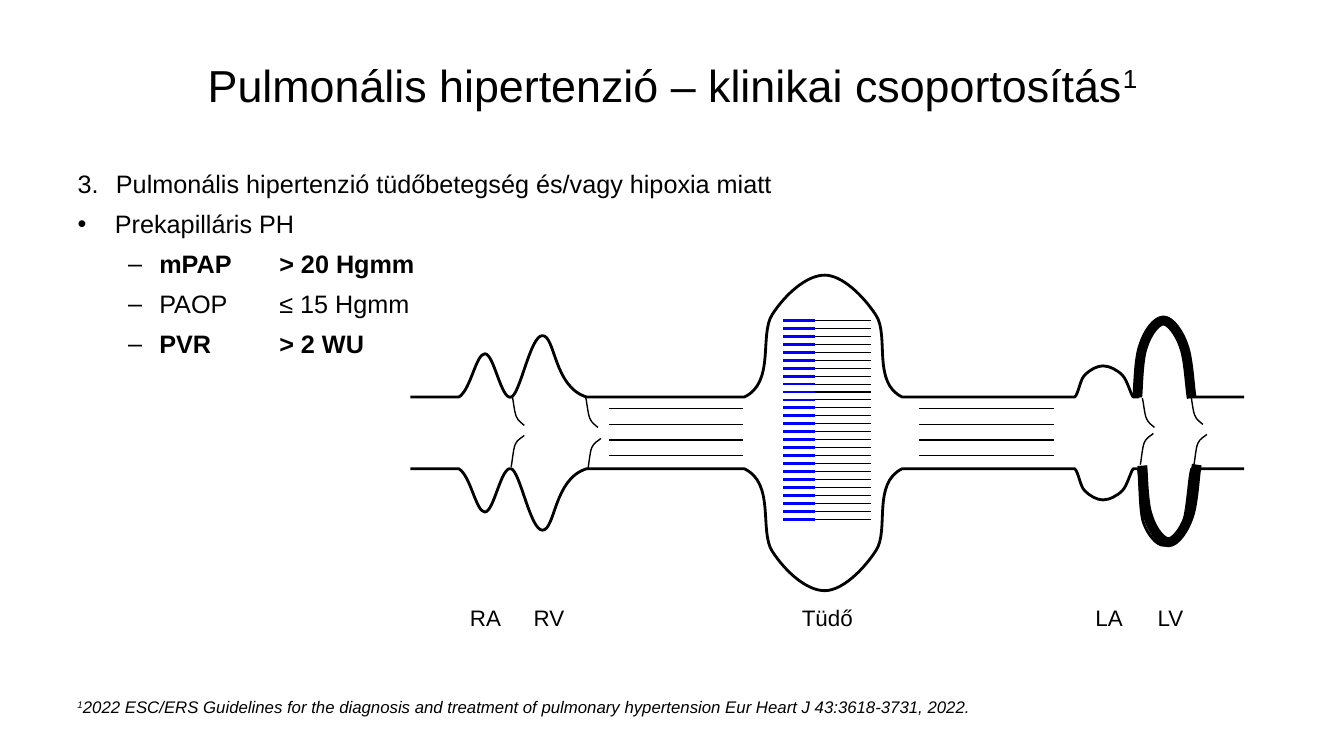
import lxml.etree
import pptx
import pptx.dml.color
import pptx.enum.shapes
import pptx.enum.text
import pptx.oxml.ns
import pptx.util

Inches = pptx.util.Inches
Pt = pptx.util.Pt
ALIGN = pptx.enum.text.PP_ALIGN
AUTO_SIZE = pptx.enum.text.MSO_AUTO_SIZE
qn = pptx.oxml.ns.qn

BLACK = pptx.dml.color.RGBColor(0x00, 0x00, 0x00)
BLUE = pptx.dml.color.RGBColor(0x00, 0x00, 0xFF)
FONT = "Arial"

# Outlines hold points (line) and triples of points (Bezier curve), in inches
WALL = [
    (0, 1.21), (0.48, 1.21),
    # Right atrium and ventricle
    ((0.6, 1.14), (0.65, 0.78), (0.74, 0.78)),
    ((0.83, 0.78), (0.9, 1.24), (1, 1.21)),
    ((1.09, 1.18), (1.19, 0.6), (1.31, 0.6)),
    ((1.44, 0.6), (1.42, 1.11), (1.75, 1.21)),
    # Lung
    (3.31, 1.21),
    ((3.62, 1.07), (3.46, 0.59), (3.59, 0.39)),
    ((3.72, 0.19), (3.93, 0), (4.11, 0)),
    ((4.28, 0), (4.49, 0.2), (4.62, 0.4)),
    ((4.75, 0.6), (4.58, 1.07), (4.88, 1.21)),
    # Left atrium
    (6.59, 1.21),
    ((6.63, 1.17), (6.64, 1.04), (6.69, 0.99)),
    ((6.74, 0.94), (6.81, 0.9), (6.87, 0.9)),
    ((6.93, 0.9), (7.01, 0.94), (7.06, 0.99)),
    ((7.11, 1.04), (7.14, 1.17), (7.17, 1.21)),
    # Left ventricle
    (7.22, 1.21),
    ((7.24, 1.12), (7.23, 0.81), (7.27, 0.68)),
    ((7.31, 0.56), (7.4, 0.45), (7.47, 0.45)),
    ((7.53, 0.44), (7.62, 0.53), (7.66, 0.66)),
    ((7.71, 0.78), (7.72, 1.11), (7.75, 1.21)),
    (8.27, 1.21),
]
THICK_VENTRICLE = [
    (7.21, 1.21),
    ((7.22, 1.13), (7.22, 0.83), (7.27, 0.7)),
    ((7.31, 0.57), (7.4, 0.45), (7.47, 0.45)),
    ((7.54, 0.45), (7.63, 0.58), (7.67, 0.7)),
    ((7.72, 0.83), (7.73, 1.11), (7.75, 1.22)),
]
UPPER_LEAFLET = [
    (0, 0),
    ((0.01, 0.03), (0.02, 0.15), (0.04, 0.2)),
    ((0.06, 0.25), (0.1, 0.27), (0.12, 0.29)),
]
LOWER_LEAFLET = [
    (0, 0),
    ((0.01, -0.04), (0.02, -0.17), (0.04, -0.22)),
    ((0.06, -0.27), (0.11, -0.29), (0.13, -0.31)),
]
UPPER_VALVES = [(1.01, 1.2), (1.74, 1.22), (7.26, 1.22), (7.74, 1.19)]
LOWER_VALVES = [(1, 1.9), (1.76, 1.93), (7.24, 1.88), (7.77, 1.89)]
CAPILLARIES = 26
CAPILLARY_GAP = 1.97 / (CAPILLARIES - 1)

CRITERIA = [
    # text, level, bullet tag, bullet attributes, margin, hanging, bold
    ("Pulmonális hipertenzió tüdőbetegség és/vagy hipoxia miatt", 0,
     "a:buAutoNum", {"type": "arabicPeriod", "startAt": "3"}, 0.38, 0.38, False),
    ("Prekapilláris PH", 0, "a:buChar", {"char": "•"}, 0.37, 0.37, False),
    ("mPAP\t> 20 Hgmm", 1, "a:buChar", {"char": "–"}, 0.81, 0.31, True),
    ("PAOP\t≤ 15 Hgmm", 1, "a:buChar", {"char": "–"}, 0.81, 0.31, False),
    ("PVR\t> 2 WU", 1, "a:buChar", {"char": "–"}, 0.81, 0.31, True),
]


def place(part, left, top, width, height):
    part.left, part.top = Inches(left), Inches(top)
    part.width, part.height = Inches(width), Inches(height)


def format_run(run, size, bold=False, italic=False, superscript=False):
    run.font.name, run.font.size = FONT, Pt(size)
    run.font.bold, run.font.italic = bold, italic
    run.font.color.rgb = BLACK
    if superscript:
        run.font._element.set("baseline", "30000")


def draw_outline(slide, outline, left, top, weight, mirror=1):
    parts = [part if len(part) == 3 else (part,) for part in outline]
    points = [(Inches(left + x), Inches(top + mirror * y)) for part in parts for x, y in part]
    builder = slide.shapes.build_freeform(*points[0], scale=1.0)
    builder.add_line_segments(points[1:], close=False)
    curve = builder.convert_to_shape()
    # Join each triple of segments into one Bezier curve
    segments = iter(list(curve._element.iter(qn("a:lnTo"))))
    for part in parts[1:]:
        first, *others = [next(segments) for _ in part]
        if others:
            first.tag = qn("a:cubicBezTo")
        for segment in others:
            first.append(segment[0])
            segment.getparent().remove(segment)
    curve.shadow.inherit = False
    curve.fill.background()
    curve.line.color.rgb = BLACK
    curve.line.width = Pt(weight)


def draw_line(slide, start, end, y, color, weight):
    line = slide.shapes.add_connector(
        pptx.enum.shapes.MSO_CONNECTOR.STRAIGHT,
        Inches(start), Inches(y), Inches(end), Inches(y))
    line.line.color.rgb = color
    line.line.width = Pt(weight)
    lxml.etree.SubElement(line._element.spPr, qn("a:effectLst"))


def add_title(slide, *box):
    title = slide.shapes.title
    place(title, *box)
    title.text_frame.vertical_anchor = pptx.enum.text.MSO_ANCHOR.MIDDLE
    title.text_frame.auto_size = AUTO_SIZE.NONE
    heading = title.text_frame.paragraphs[0]
    heading.text = "Pulmonális hipertenzió – klinikai csoportosítás"
    heading.alignment = ALIGN.CENTER
    format_run(heading.runs[0], 32)
    reference = heading.add_run()
    reference.text = "1"
    format_run(reference, 32, superscript=True)


def add_criteria(slide, *box):
    body = slide.placeholders[1]
    place(body, *box)
    frame = body.text_frame
    frame.auto_size = AUTO_SIZE.NONE
    frame.text = "\n".join(entry[0] for entry in CRITERIA)
    for criterion, entry in zip(frame.paragraphs, CRITERIA):
        _, level, bullet, attributes, margin, hanging, bold = entry
        criterion.level = level
        criterion.space_before, criterion.space_after = Pt(1), Pt(6)
        properties = criterion._p.get_or_add_pPr()
        properties.set("marL", str(Inches(margin)))
        properties.set("indent", str(-Inches(hanging)))
        lxml.etree.SubElement(properties, qn("a:buFont"), typeface=FONT)
        lxml.etree.SubElement(properties, qn(bullet), attributes)
        if level:
            tabs = lxml.etree.SubElement(properties, qn("a:tabLst"))
            lxml.etree.SubElement(tabs, qn("a:tab"), pos=str(Inches(2)), algn="l")
        for run in criterion.runs:
            format_run(run, 18, bold)


def add_circulation(slide, left, top, height):
    # Vessel and chamber walls, the lower ones mirrored
    draw_outline(slide, WALL, left, top, 2)
    draw_outline(slide, WALL, left, top + height, 2, mirror=-1)
    draw_outline(slide, THICK_VENTRICLE, left, top, 7)
    draw_outline(slide, THICK_VENTRICLE, left + 0.05, top + height - 0.03, 7, mirror=-1)
    # Valves
    for leaflet, valves in ((UPPER_LEAFLET, UPPER_VALVES), (LOWER_LEAFLET, LOWER_VALVES)):
        for x, y in valves:
            draw_outline(slide, leaflet, left + x, top + y, 1)
    # Flow in the pulmonary artery and veins
    for start, end in ((1.97, 3.3), (5.04, 6.38)):
        for row in range(4):
            draw_line(slide, left + start, left + end,
                      top + 1.32 + 2 * row * CAPILLARY_GAP, BLACK, 0.75)
    # Lung capillaries with their blue precapillary part
    for end, color, weight in ((4.57, BLACK, 0.75), (4.01, BLUE, 2)):
        for row in range(CAPILLARIES):
            draw_line(slide, left + 3.7, left + end,
                      top + 0.45 + row * CAPILLARY_GAP, color, weight)
    # Names of the chambers and the lung
    for name, x, width in (("RA", 0.49, 0.51), ("RV", 1.12, 0.51), ("Tüdő", 3.78, 0.71),
                           ("LA", 6.69, 0.48), ("LV", 7.31, 0.46)):
        label = slide.shapes.add_textbox(
            Inches(left + x), Inches(top + height + 0.08), Inches(width), Inches(0.37))
        label.text_frame.word_wrap = False
        label.text_frame.auto_size = AUTO_SIZE.SHAPE_TO_FIT_TEXT
        label.text_frame.text = name
        label.text_frame.paragraphs[0].alignment = ALIGN.CENTER
        format_run(label.text_frame.paragraphs[0].runs[0], 16)


def add_footnote(slide, *box):
    footnote = slide.shapes.add_textbox(*map(Inches, box))
    footnote.text_frame.word_wrap = True
    citation = footnote.text_frame.paragraphs[0]
    citation.text = "1"
    format_run(citation.runs[0], 12, italic=True, superscript=True)
    source = citation.add_run()
    source.text = ("2022 ESC/ERS Guidelines for the diagnosis and treatment of pulmonary "
                   "hypertension Eur Heart J 43:3618-3731, 2022.")
    format_run(source, 12, italic=True)


def main():
    deck = pptx.Presentation()
    deck.slide_width, deck.slide_height = Inches(13.33), Inches(7.5)
    slide = deck.slides.add_slide(deck.slide_layouts[1])
    add_title(slide, 0.67, 0.21, 12, 1.25)
    add_criteria(slide, 0.67, 1.62, 7.81, 4.49)
    add_circulation(slide, 4.07, 2.73, 3.13)
    add_footnote(slide, 0.67, 6.86, 12.14, 0.3)
    deck.save("out.pptx")


if __name__ == "__main__":
    main()
